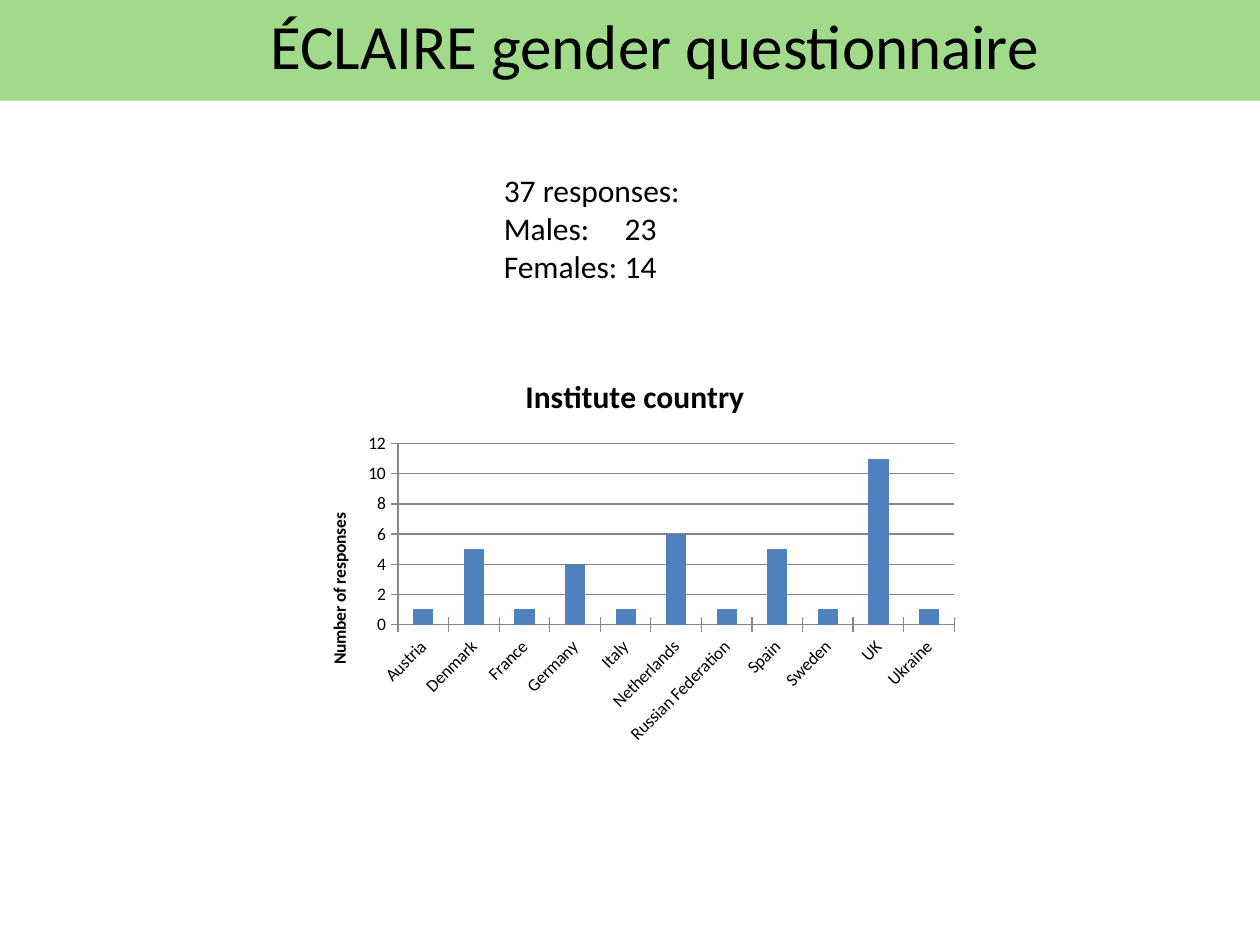
from lxml.etree import SubElement
from pptx import Presentation
from pptx.chart.data import CategoryChartData
from pptx.dml.color import RGBColor
from pptx.enum.chart import XL_CHART_TYPE, XL_TICK_MARK
from pptx.enum.shapes import MSO_SHAPE
from pptx.enum.text import MSO_ANCHOR, PP_ALIGN
from pptx.oxml.ns import qn
from pptx.util import Inches, Pt

BLACK = RGBColor(0x00, 0x00, 0x00)
GREEN = RGBColor(0xA2, 0xDA, 0x8C)
BLUE = RGBColor(0x4F, 0x81, 0xBD)
GREY = RGBColor(0x87, 0x87, 0x87)
FONT = "Calibri"
COLUMNS, ROWS = 100, 75
TITLE_ONLY = 5

RESPONSES = {
    "Austria": 1, "Denmark": 5, "France": 1, "Germany": 4, "Italy": 1,
    "Netherlands": 6, "Russian Federation": 1, "Spain": 5, "Sweden": 1,
    "UK": 11, "Ukraine": 1,
}


class SlideBuilder:
    """Holds the style and the slide; places are in grid columns and rows."""

    def __init__(self, deck):
        self.slide = deck.slides.add_slide(deck.slide_layouts[TITLE_ONLY])
        self.column = deck.slide_width / COLUMNS
        self.row = deck.slide_height / ROWS

    def place(self, left, top, width, height):
        return (round(left * self.column), round(top * self.row),
                round(width * self.column), round(height * self.row))

    def style(self, font, size, bold=False):
        font.name, font.size, font.bold = FONT, Pt(size), bold
        font.color.rgb = BLACK

    def add_span(self, para, text, size, bold=False):
        span = para.add_run()
        span.text = text
        self.style(span.font, size, bold)

    def banner(self, area):
        band = self.slide.shapes.add_shape(MSO_SHAPE.RECTANGLE, *self.place(*area))
        band.shadow.inherit = False
        band.fill.solid()
        band.fill.fore_color.rgb = GREEN
        band.line.fill.background()

    def title(self, area, text, size):
        title = self.slide.shapes.title
        title.left, title.top, title.width, title.height = self.place(*area)
        # Bring the title in front of the banner
        title.element.getparent().append(title.element)
        title.text_frame.vertical_anchor = MSO_ANCHOR.MIDDLE
        para = title.text_frame.paragraphs[0]
        para.alignment = PP_ALIGN.CENTER
        self.add_span(para, text, size)

    def text(self, area, lines, size, tab):
        box = self.slide.shapes.add_textbox(*self.place(*area))
        frame = box.text_frame
        frame.word_wrap = True
        for number, line in enumerate(lines):
            para = frame.add_paragraph() if number else frame.paragraphs[0]
            if "\t" in line:
                stops = SubElement(para._p.get_or_add_pPr(), qn("a:tabLst"))
                SubElement(stops, qn("a:tab"), pos=str(Inches(tab)), algn="l")
            self.add_span(para, line, size)

    def column_chart(self, area, heading, axis_heading, values):
        data = CategoryChartData()
        data.categories = list(values)
        data.add_series("Series 1", list(values.values()))
        chart = self.slide.shapes.add_chart(
            XL_CHART_TYPE.COLUMN_CLUSTERED, *self.place(*area), data).chart
        self.style(chart.font, 10)
        chart.has_legend = False
        chart.has_title = True
        self.add_span(chart.chart_title.text_frame.paragraphs[0], heading, 18, True)
        chart.chart_title.include_in_layout = False

        # Columns
        plot = chart.plots[0]
        plot.vary_by_categories = False
        plot.gap_width = 150
        fill = plot.series[0].format.fill
        fill.solid()
        fill.fore_color.rgb = BLUE

        # Axes
        countries, counts = chart.category_axis, chart.value_axis
        for axis in (countries, counts):
            axis.major_tick_mark = XL_TICK_MARK.CROSS
            axis.minor_tick_mark = XL_TICK_MARK.NONE
            axis.format.line.color.rgb = GREY
            self.style(axis.tick_labels.font, 10)
        slant = countries._element.find(qn("c:txPr")).find(qn("a:bodyPr"))
        slant.set("rot", str(-45 * 60000))
        slant.set("vert", "horz")
        counts.minimum_scale, counts.maximum_scale, counts.major_unit = 0, 12, 2
        counts.has_major_gridlines = True
        counts.major_gridlines.format.line.color.rgb = GREY
        counts.has_title = True
        self.add_span(counts.axis_title.text_frame.paragraphs[0], axis_heading, 10, True)


def main():
    deck = Presentation()
    deck.slide_width, deck.slide_height = Inches(10), Inches(7.5)
    page = SlideBuilder(deck)

    # Heading
    page.banner((0, 0, COLUMNS, 8))
    page.title((3.9, 0, COLUMNS - 3.9, 7.1), "ÉCLAIRE gender questionnaire", 36)

    # Responses by country
    page.column_chart((24, 28.1, 52.8, 31.6), "Institute country",
                      "Number of responses", RESPONSES)

    # Responses by gender
    page.text((39, 13.1, 20.5, 10.1),
              ["37 responses:", "Males:\t23", "Females:\t14"], 18, tab=0.96)

    deck.save("out.pptx")


if __name__ == "__main__":
    main()
